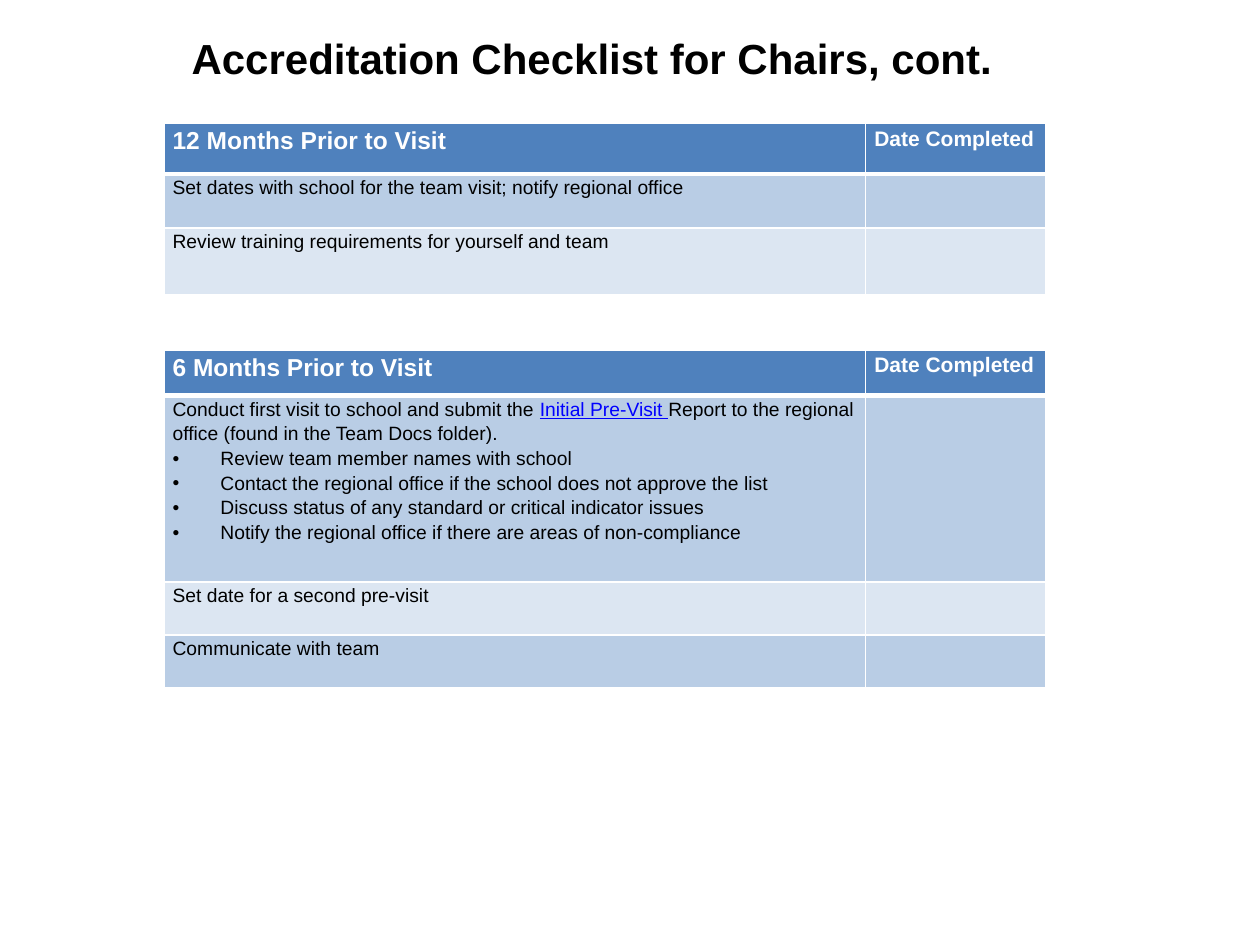
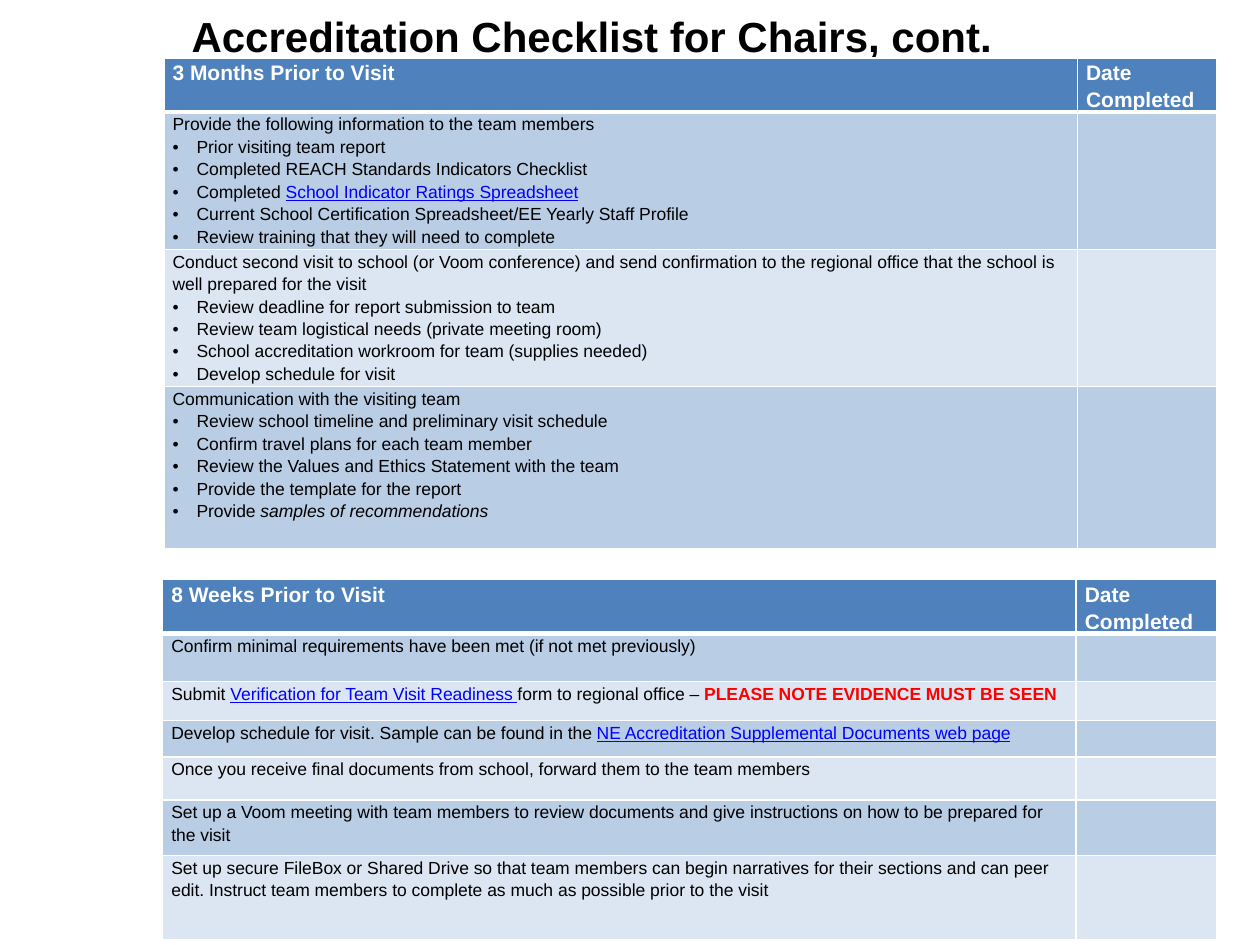
from lxml.etree import Element, SubElement
from pptx import Presentation
from pptx.dml.color import RGBColor
from pptx.enum.text import MSO_ANCHOR, MSO_AUTO_SIZE, PP_ALIGN
from pptx.oxml.ns import qn
from pptx.util import Inches, Pt

FONT = "Arial"
TITLE = "Accreditation Checklist for Chairs, cont."
WHITE = RGBColor(0xFF, 0xFF, 0xFF)
BLACK = RGBColor(0, 0, 0)
BLUE = RGBColor(0, 0, 0xFF)
RED = RGBColor(0xFF, 0, 0)
HEAD = RGBColor(0x4F, 0x81, 0xBD)
BANDS = [RGBColor(0xB9, 0xCD, 0xE5), RGBColor(0xDC, 0xE6, 0xF2)]

# Checklist rows: the first line is plain, the others are bullets.
# A line in several runs is a list of (text, style) pairs.
YEAR = [
    ["Set dates with school for the team visit; notify regional office"],
    ["Review training requirements for yourself and team"],
]
HALF = [
    [
        [("Conduct first visit to school and submit the ", ""),
         ("Initial Pre-Visit ", "link"),
         ("Report to the regional office (found in the Team Docs folder).", "")],
        "Review team member names with school",
        "Contact the regional office if the school does not approve the list",
        "Discuss status of any standard or critical indicator issues",
        "Notify the regional office if there are areas of non-compliance",
    ],
    ["Set date for a second pre-visit"],
    ["Communicate with team"],
]
QUARTER = [
    [
        "Provide the following information to the team members",
        "Prior visiting team report",
        "Completed REACH Standards Indicators Checklist",
        [("Completed ", ""), ("School Indicator Ratings Spreadsheet", "link")],
        "Current School Certification Spreadsheet/EE Yearly Staff Profile",
        "Review training that they will need to complete",
    ],
    [
        "Conduct second visit to school (or Voom conference) and send confirmation "
        "to the regional office that the school is well prepared for the visit",
        "Review deadline for report submission to team",
        "Review team logistical needs (private meeting room)",
        "School accreditation workroom for team (supplies needed)",
        "Develop schedule for visit",
    ],
    [
        "Communication with the visiting team",
        "Review school timeline and preliminary visit schedule",
        "Confirm travel plans for each team member",
        "Review the Values and Ethics Statement with the team",
        "Provide the template for the report",
        [("Provide ", ""), ("samples of recommendations", "italic")],
    ],
]
WEEKS = [
    ["Confirm minimal requirements have been met (if not met previously)"],
    [[("Submit ", ""), ("Verification for Team Visit Readiness ", "link"),
      ("form to regional office – ", ""),
      ("PLEASE NOTE EVIDENCE MUST BE SEEN", "alert")]],
    [[("Develop schedule for visit. Sample can be found in the ", ""),
      ("NE Accreditation Supplemental Documents web page", "link")]],
    ["Once you receive final documents from school, forward them to the team members"],
    ["Set up a Voom meeting with team members to review documents and give "
     "instructions on how to be prepared for the visit"],
    ["Set up secure FileBox or Shared Drive so that team members can begin narratives "
     "for their sections and can peer edit. Instruct team members to complete as much "
     "as possible prior to the visit"],
]

# Each slide: title top, head size, body size, bullet indent, tables.
# Each table: left, top, column widths, row heights, heading, rows.
SLIDES = [
    (0.21, 14, 11, 0.38, [
        (1.3, 0.98, [5.57, 1.43], [0.4, 0.43, 0.53], "12 Months Prior to Visit", YEAR),
        (1.3, 2.78, [5.57, 1.43], [0.36, 1.48, 0.42, 0.42],
         "6 Months Prior to Visit", HALF),
    ]),
    (0.03, 12, 10, 0.19, [
        (1.3, 0.46, [7.25, 1.11], [0.41, 1.09, 1.09, 1.29],
         "3 Months Prior to Visit", QUARTER),
        (1.29, 4.6, [7.25, 1.12], [0.41, 0.38, 0.31, 0.29, 0.34, 0.44, 0.67],
         "8 Weeks Prior to Visit", WEEKS),
    ]),
]


def add_run(para, text, size, color, bold=False):
    run = para.add_run()
    run.text = text
    run.font.name = FONT
    run.font.size = Pt(size)
    run.font.color.rgb = color
    run.font.bold = bold
    return run


def fill_cell(cell, lines, size, indent, color, bold=False):
    frame = cell.text_frame
    for i, line in enumerate(lines):
        para = frame.add_paragraph() if i else frame.paragraphs[0]
        para.line_spacing = 1.15
        if i:
            props = para._p.get_or_add_pPr()
            props.set("marL", str(Inches(indent)))
            props.set("indent", str(-Inches(indent)))
            SubElement(props, qn("a:buFont")).set("typeface", FONT)
            SubElement(props, qn("a:buChar")).set("char", "•")
        for text, style in [(line, "")] if isinstance(line, str) else line:
            tint = {"link": BLUE, "alert": RED}.get(style, color)
            run = add_run(para, text, size, tint, bold or style == "alert")
            if style == "link":
                run.font.underline = True
            if style == "italic":
                run.font.italic = True
    # The paragraph end sets the size of bullets and empty cells
    end = SubElement(frame.paragraphs[0]._p if not lines else para._p,
                     qn("a:endParaRPr"))
    end.set("sz", str(size * 100))


deck = Presentation()
deck.slide_width = Inches(10)
deck.slide_height = Inches(7.5)

for title_top, head_size, size, indent, tables in SLIDES:
    slide = deck.slides.add_slide(deck.slide_layouts[5])

    # Title
    title = slide.shapes.title
    title.left, title.top = Inches(1.42), Inches(title_top)
    title.width, title.height = Inches(8.24), Inches(0.68)
    frame = title.text_frame
    frame.auto_size = MSO_AUTO_SIZE.NONE
    frame.vertical_anchor = MSO_ANCHOR.TOP
    para = frame.paragraphs[0]
    para.alignment = PP_ALIGN.LEFT
    add_run(para, TITLE, 24, BLACK, True)

    # Checklists
    for left, top, widths, heights, heading, rows in tables:
        grid = slide.shapes.add_table(
            len(heights), 2, Inches(left), Inches(top),
            Inches(sum(widths)), Inches(sum(heights))).table
        for col, width in zip(grid.columns, widths):
            col.width = Inches(width)
        for row, height in zip(grid.rows, heights):
            row.height = Inches(height)
        for r, row in enumerate(grid.rows):
            for cell in row.cells:
                cell.margin_left = cell.margin_right = Inches(0.07)
                cell.margin_top = cell.margin_bottom = 0
                cell.fill.solid()
                cell.fill.fore_color.rgb = BANDS[(r - 1) % 2] if r else HEAD

        # Thick rule under the heading row
        for cell in grid.rows[0].cells:
            rule = Element(qn("a:lnB"), w=str(Pt(3)))
            paint = SubElement(rule, qn("a:solidFill"))
            SubElement(paint, qn("a:srgbClr")).set("val", str(WHITE))
            cell._tc.get_or_add_tcPr().insert(0, rule)

        fill_cell(grid.cell(0, 0), [heading], head_size, indent, WHITE, True)
        fill_cell(grid.cell(0, 1), ["Date Completed"], 12, indent, WHITE, True)
        for r, lines in enumerate(rows, 1):
            fill_cell(grid.cell(r, 0), lines, size, indent, BLACK)
            fill_cell(grid.cell(r, 1), [], size, indent, BLACK)

deck.save("out.pptx")
